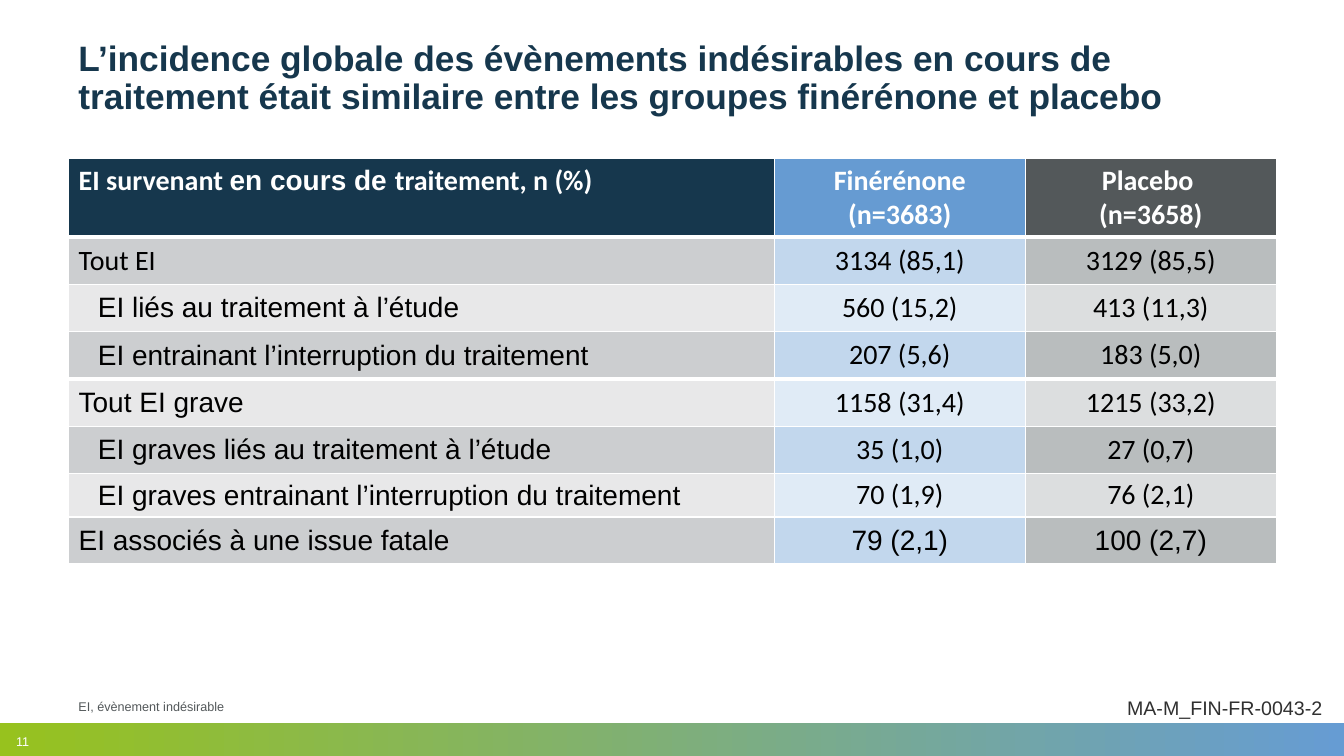
from dataclasses import dataclass
from typing import Optional

from lxml import etree
from pptx import Presentation
from pptx.dml.color import RGBColor
from pptx.enum.shapes import MSO_SHAPE
from pptx.enum.text import MSO_ANCHOR, PP_ALIGN
from pptx.oxml.ns import qn
from pptx.slide import Slide
from pptx.table import _Cell
from pptx.text.text import _Paragraph
from pptx.util import Inches, Pt

RECTANGLE = MSO_SHAPE.RECTANGLE
TOP, MIDDLE, BOTTOM = MSO_ANCHOR.TOP, MSO_ANCHOR.MIDDLE, MSO_ANCHOR.BOTTOM
LEFT, CENTER = PP_ALIGN.LEFT, PP_ALIGN.CENTER


@dataclass(frozen=True)
class Theme:
    heading_font: str = "Arial"
    table_font: str = "Calibri"
    navy: str = "16374D"
    blue: str = "669BD2"
    gray: str = "53585A"
    white: str = "FFFFFF"
    black: str = "000000"
    code: str = "303030"
    band_start: str = "97C21E"
    band_end: str = "669CD3"
    odd_fills: tuple[str, ...] = ("CCCED0", "C2D7ED", "B9BDBE")
    even_fills: tuple[str, ...] = ("E8E8E9", "E0EBF6", "DCDEDF")
    title_size: float = 25.2
    table_size: float = 20
    code_size: float = 14
    small_size: float = 9
    thin_line: float = 1
    thick_line: float = 3


THEME = Theme()


@dataclass(frozen=True)
class Label:
    text: str
    left: float
    top: float
    width: float
    height: float
    size: float
    color: str
    bold: bool = False
    anchor: MSO_ANCHOR = TOP
    wrap: bool = True
    left_inset: float = 0.1
    line_spacing: Optional[float] = None


@dataclass(frozen=True)
class EventRow:
    event: str
    finerenone: str
    placebo: str
    height: float = 0.47
    indent: float = 0
    event_font: str = THEME.heading_font
    value_font: str = THEME.table_font
    top_line: float = THEME.thin_line
    bottom_line: float = THEME.thin_line


LABELS = [
    Label("EI, évènement indésirable", 0.68, 6.58, 11.93, 0.55,
          THEME.small_size, THEME.gray, anchor=BOTTOM),
    Label("11", 0.16, 7.23, 0.41, 0.25, THEME.small_size, THEME.white,
          anchor=BOTTOM, left_inset=0),
    Label("L’incidence globale des évènements indésirables en cours de traitement "
          "était similaire entre les groupes finérénone et placebo",
          0.68, 0.36, 11.93, 1.05, THEME.title_size, THEME.navy, bold=True,
          line_spacing=0.9),
    Label("MA-M_FIN-FR-0043-2", 11.08, 6.85, 2.15, 0.34, THEME.code_size,
          THEME.code, wrap=False),
]

EVENTS = [
    EventRow("Tout EI", "3134 (85,1)", "3129 (85,5)",
             event_font=THEME.table_font, top_line=THEME.thick_line),
    EventRow("EI liés au traitement à l’étude", "560 (15,2)", "413 (11,3)", indent=0.19),
    EventRow("EI entrainant l’interruption du traitement", "207 (5,6)", "183 (5,0)",
             indent=0.19, bottom_line=THEME.thick_line),
    EventRow("Tout EI grave", "1158 (31,4)", "1215 (33,2)", top_line=THEME.thick_line),
    EventRow("EI graves liés au traitement à l’étude", "35 (1,0)", "27 (0,7)", indent=0.19),
    EventRow("EI graves entrainant l’interruption du traitement", "70 (1,9)", "76 (2,1)",
             height=0.43, indent=0.19),
    EventRow("EI associés à une issue fatale", "79 (2,1)", "100 (2,7)",
             value_font=THEME.heading_font, bottom_line=THEME.thick_line),
]

COLUMN_WIDTHS = (7, 2.49, 2.49)
HEADER_HEIGHT = 0.78
HEADER_FILLS = (THEME.navy, THEME.blue, THEME.gray)


def add_run(paragraph: _Paragraph, text: str, size: float, color: str,
            font: str = THEME.heading_font, bold: bool = False) -> None:
    run = paragraph.add_run()
    run.text = text
    run.font.size = Pt(size)
    run.font.name = font
    run.font.bold = bold
    run.font.color.rgb = RGBColor.from_string(color)


def add_label(slide: Slide, label: Label) -> None:
    box = slide.shapes.add_textbox(Inches(label.left), Inches(label.top),
                                   Inches(label.width), Inches(label.height))
    frame = box.text_frame
    frame.word_wrap = label.wrap
    frame.vertical_anchor = label.anchor
    frame.margin_left = Inches(label.left_inset)
    paragraph = frame.paragraphs[0]
    if label.line_spacing:
        paragraph.line_spacing = label.line_spacing
    add_run(paragraph, label.text, label.size, label.color, bold=label.bold)


def add_footer_band(slide: Slide) -> None:
    band = slide.shapes.add_shape(RECTANGLE, 0, Inches(7.17), Inches(13.33), Inches(0.33))
    band.shadow.inherit = False
    band.line.fill.background()
    band.fill.gradient()
    band.fill.gradient_angle = 0
    for stop, color in zip(band.fill.gradient_stops, (THEME.band_start, THEME.band_end)):
        stop.color.rgb = RGBColor.from_string(color)


def style_cell(cell: _Cell, fill: str, top_line: float, bottom_line: float) -> None:
    cell.fill.solid()
    cell.fill.fore_color.rgb = RGBColor.from_string(fill)
    properties = cell._tc.get_or_add_tcPr()
    sides = (("a:lnL", THEME.thin_line), ("a:lnR", THEME.thin_line),
             ("a:lnT", top_line), ("a:lnB", bottom_line))
    for position, (side, width) in enumerate(sides):
        border = etree.Element(qn(side), w=str(Pt(width)))
        solid = etree.SubElement(border, qn("a:solidFill"))
        etree.SubElement(solid, qn("a:srgbClr"), val=THEME.white)
        properties.insert(position, border)


def fill_header(cells: list[_Cell]) -> None:
    for cell, fill in zip(cells, HEADER_FILLS):
        style_cell(cell, fill, THEME.thin_line, THEME.thick_line)
    event, finerenone, placebo = (cell.text_frame.paragraphs[0] for cell in cells)
    for paragraph, text, font in (
        (event, "EI survenant ", THEME.table_font),
        (event, "en cours de ", THEME.heading_font),
        (event, "traitement, n (%)", THEME.table_font),
        (finerenone, "Finérénone (n=3683)", THEME.table_font),
        (placebo, "Placebo ", THEME.table_font),
    ):
        add_run(paragraph, text, THEME.table_size, THEME.white, font, bold=True)
    placebo.add_line_break()
    add_run(placebo, "(n=3658)", THEME.table_size, THEME.white, THEME.table_font, bold=True)
    finerenone.alignment = placebo.alignment = CENTER


def fill_event(cells: list[_Cell], row: EventRow, fills: tuple[str, ...]) -> None:
    texts = (row.event, row.finerenone, row.placebo)
    fonts = (row.event_font, row.value_font, row.value_font)
    for column, (cell, text, font, fill) in enumerate(zip(cells, texts, fonts, fills)):
        style_cell(cell, fill, row.top_line, row.bottom_line)
        cell.vertical_anchor = MIDDLE
        paragraph = cell.text_frame.paragraphs[0]
        paragraph.alignment = CENTER if column else LEFT
        if column:
            cell.margin_left = cell.margin_right = Inches(0.07)
            cell.margin_top = cell.margin_bottom = 0
        elif row.indent:
            paragraph._p.get_or_add_pPr().set("marL", str(Inches(row.indent)))
        add_run(paragraph, text, THEME.table_size, THEME.black, font)


def add_event_table(slide: Slide) -> None:
    heights = [HEADER_HEIGHT] + [row.height for row in EVENTS]
    table = slide.shapes.add_table(len(heights), len(COLUMN_WIDTHS), Inches(0.68), Inches(1.57),
                                   Inches(sum(COLUMN_WIDTHS)), Inches(sum(heights))).table
    table.horz_banding = False
    for column, width in zip(table.columns, COLUMN_WIDTHS):
        column.width = Inches(width)
    for table_row, height in zip(table.rows, heights):
        table_row.height = Inches(height)
    fill_header(list(table.rows[0].cells))
    for index, row in enumerate(EVENTS):
        fills = THEME.even_fills if index % 2 else THEME.odd_fills
        fill_event(list(table.rows[index + 1].cells), row, fills)


def main() -> None:
    deck = Presentation()
    deck.slide_width, deck.slide_height = Inches(13.33), Inches(7.5)
    slide = deck.slides.add_slide(deck.slide_layouts[6])
    add_footer_band(slide)
    add_event_table(slide)
    for label in LABELS:
        add_label(slide, label)
    deck.save("out.pptx")


if __name__ == "__main__":
    main()
